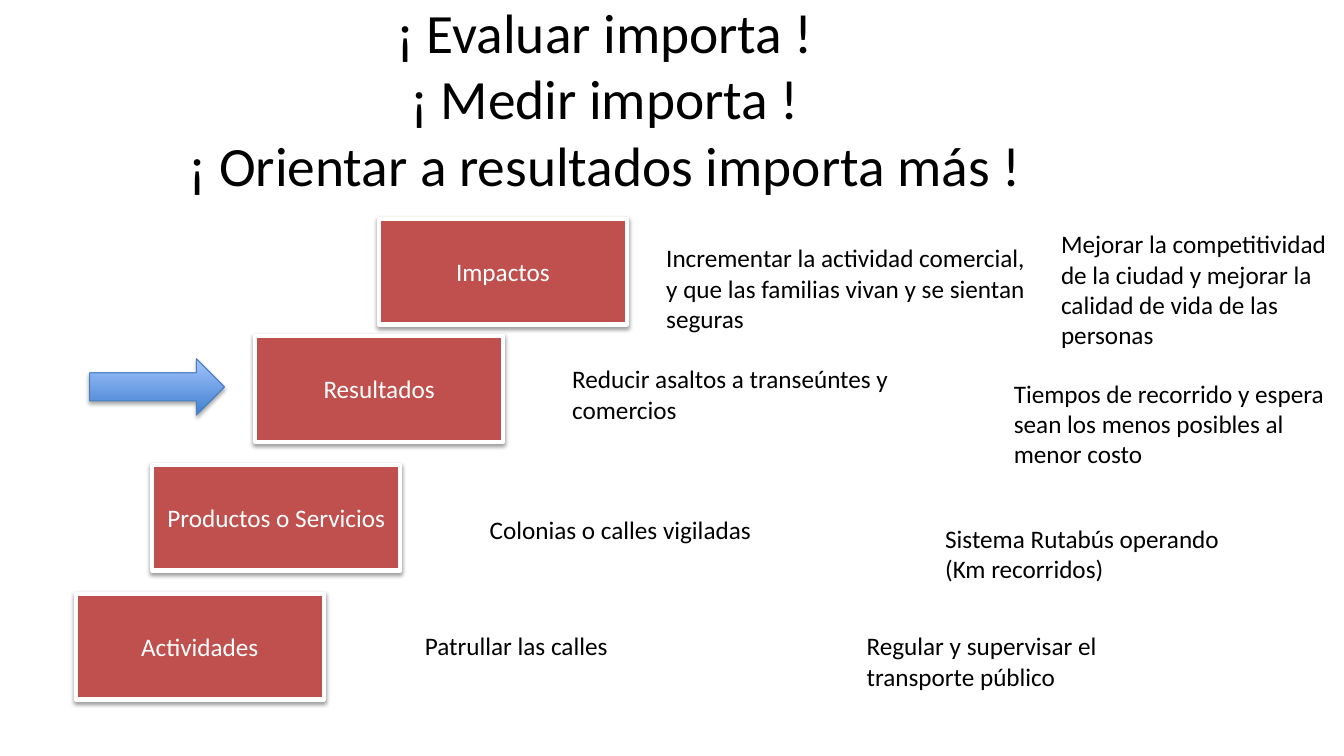
from dataclasses import dataclass

from lxml.etree import SubElement
from pptx import Presentation
from pptx.dml.color import RGBColor
from pptx.enum.shapes import MSO_SHAPE as Shape
from pptx.enum.text import MSO_ANCHOR as Anchor, MSO_AUTO_SIZE as AutoSize, PP_ALIGN as Align
from pptx.oxml.ns import qn
from pptx.util import Cm, Pt

BLACK, WHITE, RED = "000000", "FFFFFF", "C0504D"
BOX_WIDTH, BOX_HEIGHT = 6.25, 2.67


@dataclass
class Note:
    left: float
    top: float
    width: float
    height: float
    lines: list[str]


@dataclass
class Level:
    name: str
    left: float
    top: float
    safety: Note
    transport: Note


LEVELS = [
    Level("Actividades", 1.91, 14.96,
          Note(10.46, 15.75, 8.89, 1.02, ["Patrullar las calles"]),
          Note(21.59, 15.77, 8.89, 1.8, ["Regular y supervisar el transporte público"])),
    Level("Productos o Servicios", 3.84, 11.71,
          Note(12.09, 12.83, 8.89, 1.02, ["Colonias o calles vigiladas"]),
          Note(23.57, 13.06, 8.89, 1.8, ["Sistema Rutabús operando", "(Km recorridos)"])),
    Level("Resultados", 6.43, 8.46,
          Note(14.17, 9.04, 8.89, 1.8, ["Reducir asaltos a transeúntes y comercios"]),
          Note(25.3, 9.4, 8.89, 2.57, ["Tiempos de recorrido y espera",
                                       "sean los menos posibles al menor costo"])),
    Level("Impactos", 9.55, 5.51,
          Note(16.54, 5.99, 9.88, 2.57, ["Incrementar la actividad comercial, y que las "
                                         "familias vivan y se sientan seguras"]),
          Note(26.49, 5.64, 7.47, 3.33, ["Mejorar la competitividad de la ciudad y mejorar "
                                         "la calidad de vida de las personas"])),
]


def rgb(color: str) -> RGBColor:
    return RGBColor.from_string(color)


def write(tf, lines: list[str], *, size: float = 18, color: str = BLACK,
          align=Align.LEFT, anchor=Anchor.TOP) -> None:
    tf.word_wrap = True
    tf.vertical_anchor = anchor
    tf.text = "\n".join(lines)
    for p in tf.paragraphs:
        p.alignment = align
        for r in p.runs:
            r.font.name = "Calibri"
            r.font.size = Pt(size)
            r.font.color.rgb = rgb(color)


def add_shadow(sp, *, opacity: int, distance: float) -> None:
    sp.shadow.inherit = False
    effects = sp._element.spPr.find(qn("a:effectLst"))
    shadow = SubElement(effects, qn("a:outerShdw"), blurRad=str(Pt(3.1)),
                        dist=str(Pt(distance)), dir="5400000", rotWithShape="0")
    tone = SubElement(shadow, qn("a:srgbClr"), val=BLACK)
    SubElement(tone, qn("a:alpha"), val=str(opacity * 1000))


def add_title(slide) -> None:
    sp = slide.shapes.title
    sp.left, sp.top, sp.width, sp.height = Cm(0), Cm(0.89), Cm(30.48), Cm(4.85)
    tf = sp.text_frame
    tf.auto_size = AutoSize.NONE
    tf.margin_bottom = Cm(1.83)
    write(tf, ["¡ Evaluar importa !\v¡ Medir importa !\v¡ Orientar a resultados importa más !"],
          size=39.6, align=Align.CENTER, anchor=Anchor.MIDDLE)


def add_level(slide, level: Level) -> None:
    sp = slide.shapes.add_shape(Shape.RECTANGLE, Cm(level.left), Cm(level.top),
                                Cm(BOX_WIDTH), Cm(BOX_HEIGHT))
    sp.fill.solid()
    sp.fill.fore_color.rgb = rgb(RED)
    sp.line.color.rgb = rgb(WHITE)
    sp.line.width = Pt(3)
    add_shadow(sp, opacity=38, distance=1.6)
    write(sp.text_frame, [level.name], color=WHITE, align=Align.CENTER, anchor=Anchor.MIDDLE)


def add_note(slide, note: Note) -> None:
    sp = slide.shapes.add_textbox(Cm(note.left), Cm(note.top), Cm(note.width), Cm(note.height))
    write(sp.text_frame, note.lines)
    sp.text_frame.auto_size = AutoSize.SHAPE_TO_FIT_TEXT


def add_arrow(slide) -> None:
    sp = slide.shapes.add_shape(Shape.RIGHT_ARROW, Cm(2.26), Cm(9.04), Cm(3.4), Cm(1.42))
    sp.fill.gradient()
    sp.fill.gradient_angle = 90
    for stop, color, position in zip(sp.fill.gradient_stops, ("3F80CE", "A4C4FF"), (0, 1)):
        stop.color.rgb = rgb(color)
        stop.position = position
    sp.line.color.rgb = rgb("4B7EBC")
    sp.line.width = Pt(0.75)
    add_shadow(sp, opacity=35, distance=1.8)


def main() -> None:
    prs = Presentation()
    prs.slide_width, prs.slide_height = Cm(33.87), Cm(19.05)
    slide = prs.slides.add_slide(prs.slide_layouts[5])
    add_title(slide)
    for level in LEVELS:
        add_level(slide, level)
        add_note(slide, level.safety)
        add_note(slide, level.transport)
    add_arrow(slide)
    prs.save("out.pptx")


if __name__ == "__main__":
    main()
